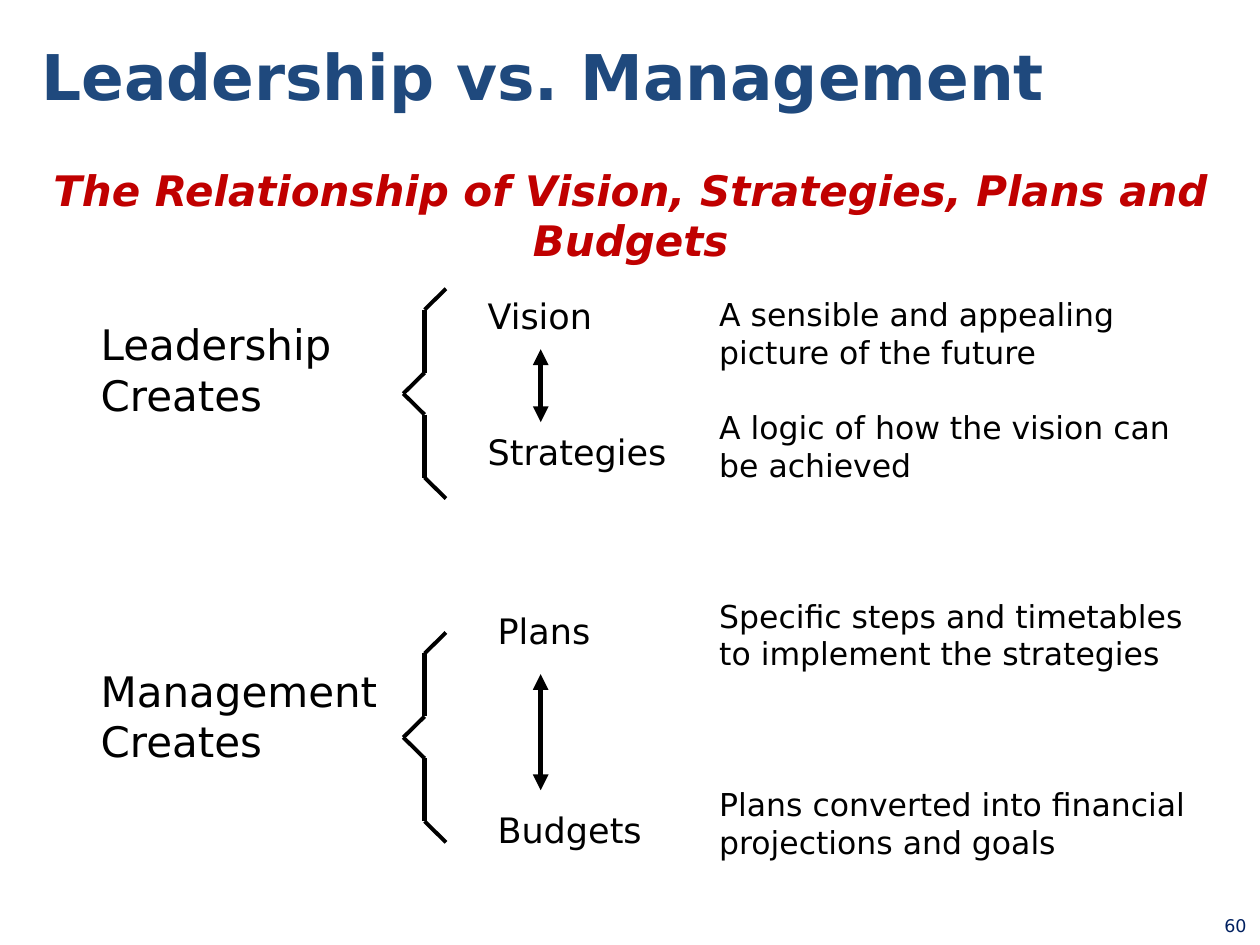
from itertools import pairwise

from lxml import etree
from pptx import Presentation
from pptx.dml.color import RGBColor
from pptx.enum import shapes, text
from pptx.oxml.ns import qn
from pptx.util import Cm, Pt

FONT = "DejaVu Sans"
BLACK = RGBColor(0x00, 0x00, 0x00)
BLUE = RGBColor(0x1F, 0x49, 0x7D)
RED = RGBColor(0xC0, 0x00, 0x00)
NAVY = RGBColor(0x00, 0x20, 0x60)

DESCRIPTIONS = [
    ("A sensible and appealing picture of the future", 0),
    ("A logic of how the vision can be achieved", 1),
    ("Specific steps and timetables to implement the strategies", 3),
    ("Plans converted into financial projections and goals", 3),
]
LINE_HEIGHT = 21.5


def style(p, size, color=BLACK, bold=False, italic=False):
    """Set the font of a paragraph."""
    f = p.font
    f.name, f.size, f.bold, f.italic = FONT, Pt(size), bold, italic
    f.color.rgb = color


def add_text(s, box, lines, size, wrap=False, **font):
    """Add a text box with one paragraph per line."""
    tf = s.shapes.add_textbox(*map(Cm, box)).text_frame
    tf.word_wrap = wrap
    tf.auto_size = text.MSO_AUTO_SIZE.SHAPE_TO_FIT_TEXT
    tf.text = "\n".join(lines)
    for p in tf.paragraphs:
        style(p, size, **font)
    return tf


def add_line(parent, start, end, width):
    """Add a straight black line and return it."""
    c = parent.shapes.add_connector(
        shapes.MSO_CONNECTOR.STRAIGHT, *map(Cm, (*start, *end)))
    c.line.color.rgb = BLACK
    c.line.width = Pt(width)
    etree.SubElement(c._element.spPr, qn("a:effectLst"))
    return c


def add_title(s, left, top, width, height):
    """Place and format the title placeholder."""
    sp = s.shapes.title
    sp.left, sp.top, sp.width, sp.height = map(Cm, (left, top, width, height))
    tf = sp.text_frame
    tf.text = "Leadership vs. Management"
    tf.word_wrap = True
    tf.auto_size = text.MSO_AUTO_SIZE.NONE
    tf.vertical_anchor = text.MSO_ANCHOR.MIDDLE
    p = tf.paragraphs[0]
    p.alignment = text.PP_ALIGN.LEFT
    style(p, 36, BLUE, bold=True)


def add_subtitle(s, *box):
    """Add the centred subtitle."""
    tf = add_text(s, box,
                  ["The Relationship of Vision, Strategies, Plans and Budgets"],
                  24, wrap=True, color=RED, bold=True, italic=True)
    tf.auto_size = text.MSO_AUTO_SIZE.NONE
    tf.vertical_anchor = text.MSO_ANCHOR.MIDDLE
    tf.paragraphs[0].alignment = text.PP_ALIGN.CENTER


def add_bracket(s, left, top, width, height):
    """Draw a left bracket as a group of straight lines."""
    g = s.shapes.add_group_shape()
    profile = [(1, 0), (0.5, 0.1), (0.5, 0.4), (0, 0.5),
               (0.5, 0.6), (0.5, 0.9), (1, 1)]
    points = [(left + x * width, top + y * height) for x, y in profile]
    for start, end in pairwise(points):
        add_line(g, start, end, 3 if start[0] == end[0] else 2.25)


def add_term_pair(s, left, top, terms, widths, gap, arrow_x, arrow_ends):
    """Add two terms, one above the other, with a double arrow between."""
    for i, (term, width) in enumerate(zip(terms, widths)):
        add_text(s, (left, top + i * gap, width, 1.11), [term], 20)
    start, end = ((left + arrow_x, top + y) for y in arrow_ends)
    ln = add_line(s, start, end, 3).line._get_or_add_ln()
    for tag in ("a:headEnd", "a:tailEnd"):
        etree.SubElement(ln, qn(tag), type="triangle")


def add_descriptions(s, *box):
    """Add the column of descriptions, spaced by whole lines."""
    tf = add_text(s, box, [d for d, _ in DESCRIPTIONS], 18, wrap=True)
    for p, (_, gap) in zip(tf.paragraphs, DESCRIPTIONS):
        p.space_before = Pt(gap * LINE_HEIGHT)


def add_page_number(s, *box):
    """Add the page number in the corner."""
    tf = add_text(s, box, ["60"], 10, wrap=True, color=NAVY)
    tf.auto_size = text.MSO_AUTO_SIZE.NONE
    tf.margin_left = tf.margin_right = tf.margin_top = tf.margin_bottom = 0
    tf.vertical_anchor = text.MSO_ANCHOR.MIDDLE
    tf.paragraphs[0].alignment = text.PP_ALIGN.CENTER


def main():
    """Build and save the slide."""
    prs = Presentation()
    prs.slide_width, prs.slide_height = Cm(25.4), Cm(19.05)
    s = prs.slides.add_slide(prs.slide_layouts[5])
    add_title(s, 0.58, 0.13, 21.72, 2.77)
    add_subtitle(s, 0.41, 3.53, 24.61, 1.6)
    add_text(s, (1.78, 6.3, 5.55, 2.31), ["Leadership", "Creates"], 24)
    add_text(s, (1.78, 13.29, 6.45, 2.31), ["Management", "Creates"], 24)
    for top in (5.82, 12.75):
        add_bracket(s, 8.13, top, 0.86, 4.23)
    add_term_pair(s, 9.58, 5.82, ("Vision", "Strategies"), (2.7, 4.2),
                  2.74, 1.32, (1.22, 2.69))
    add_term_pair(s, 9.78, 12.17, ("Plans", "Budgets"), (2.5, 3.5),
                  4.01, 1.12, (1.42, 3.76))
    add_descriptions(s, 14.25, 5.82, 10.57, 11.79)
    add_page_number(s, 24.51, 18.26, 0.79, 0.79)
    prs.save("out.pptx")


if __name__ == "__main__":
    main()
